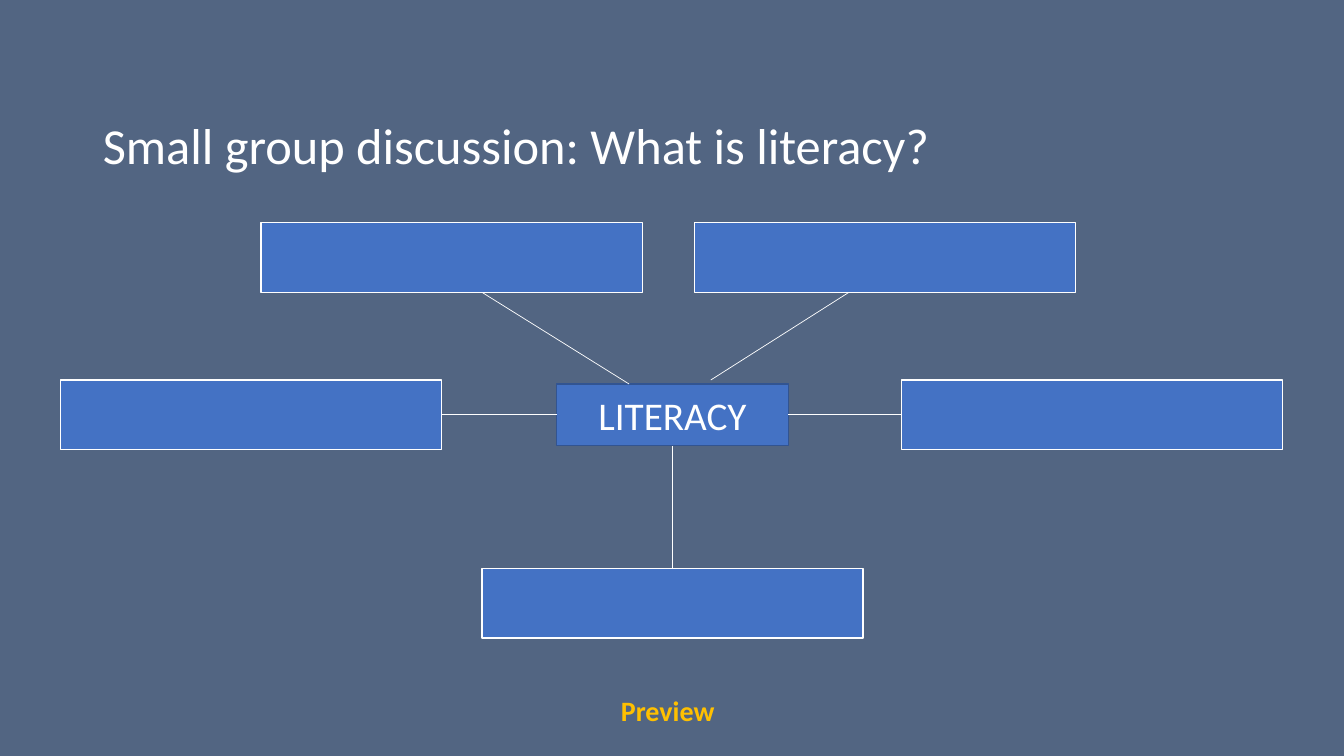
from dataclasses import dataclass
from typing import Optional

from lxml.etree import SubElement
from pptx import Presentation
from pptx.dml.color import RGBColor
from pptx.enum.shapes import MSO_CONNECTOR as Line, MSO_SHAPE as Preset
from pptx.enum.text import MSO_ANCHOR as Anchor, PP_ALIGN as Align
from pptx.oxml.ns import qn
from pptx.util import Emu, Pt

EMU_PER_PX = 9144
FONT = "Calibri"
COLORS = {
    "background": "526582",
    "box": "4472C4",
    "outline": "FFFFFF",
    "hub_outline": "325491",
    "text": "FFFFFF",
    "preview": "FFC000",
}
TOP, LEFT, BOTTOM, RIGHT = range(4)
IDEA_WIDTH, IDEA_HEIGHT = 378, 69


@dataclass(frozen=True)
class Box:
    x: int
    y: int
    width: int = IDEA_WIDTH
    height: int = IDEA_HEIGHT
    outline: str = "outline"


@dataclass(frozen=True)
class Spoke:
    start: tuple[int, int]
    end: tuple[int, int]
    idea: Optional[str] = None
    idea_side: int = TOP
    hub_side: int = TOP


HUB = Box(552, 381, 230, 61, "hub_outline")
IDEAS = {
    "upper left": Box(259, 221),
    "upper right": Box(689, 221),
    "lower": Box(478, 564),
    "left": Box(60, 377),
    "right": Box(894, 377),
}
SPOKES = [
    Spoke((478, 290), (624, 381)),
    Spoke((842, 290), (705, 377)),
    Spoke((438, 412), (552, 412), "left", RIGHT, LEFT),
    Spoke((667, 564), (667, 442), "lower", TOP, BOTTOM),
    Spoke((894, 412), (782, 412), "right", LEFT, RIGHT),
]


def px(length: int) -> Emu:
    return Emu(length * EMU_PER_PX)


def color(name: str) -> RGBColor:
    return RGBColor.from_string(COLORS[name])


def write(shape, text: str, size: int, tint: str, align, anchor, bold: bool = False):
    frame = shape.text_frame
    frame.word_wrap = True
    frame.vertical_anchor = anchor
    paragraph = frame.paragraphs[0]
    paragraph.text = text
    paragraph.alignment = align
    paragraph.font.name = FONT
    paragraph.font.size = Pt(size)
    paragraph.font.bold = bold
    paragraph.font.color.rgb = color(tint)
    return paragraph


def draw_box(slide, box: Box):
    shape = slide.shapes.add_shape(
        Preset.RECTANGLE, px(box.x), px(box.y), px(box.width), px(box.height))
    shape.shadow.inherit = False
    shape.fill.solid()
    shape.fill.fore_color.rgb = color("box")
    shape.line.color.rgb = color(box.outline)
    shape.line.width = Pt(1)
    return shape


def draw_spoke(slide, spoke: Spoke, hub, ideas: dict) -> None:
    line = slide.shapes.add_connector(
        Line.STRAIGHT, *map(px, spoke.start), *map(px, spoke.end))
    line.line.color.rgb = color("outline")
    line.line.width = Pt(0.5)
    SubElement(line._element.spPr, qn("a:effectLst"))
    if spoke.idea:
        line.begin_connect(ideas[spoke.idea], spoke.idea_side)
        line.end_connect(hub, spoke.hub_side)


def main() -> None:
    """Build the literacy discussion map and save it."""
    deck = Presentation()
    deck.slide_width, deck.slide_height = px(1333), px(750)
    slide = deck.slides.add_slide(deck.slide_layouts[5])
    slide.background.fill.solid()
    slide.background.fill.fore_color.rgb = color("background")

    preview = slide.shapes.add_textbox(px(606), px(687), px(120), px(42))
    write(preview, "Preview", 20, "preview", Align.LEFT, Anchor.TOP, True).line_spacing = 0.9

    title = slide.shapes.title
    title.left, title.top, title.width, title.height = map(px, (92, 107, 1150, 72))
    write(title, "Small group discussion: What is literacy?", 36, "text",
          Align.LEFT, Anchor.MIDDLE)

    ideas = {name: draw_box(slide, box) for name, box in IDEAS.items()}
    literacy = draw_box(slide, HUB)
    write(literacy, "LITERACY", 28, "text", Align.CENTER, Anchor.MIDDLE)
    for spoke in SPOKES:
        draw_spoke(slide, spoke, literacy, ideas)

    deck.save("out.pptx")


if __name__ == "__main__":
    main()
